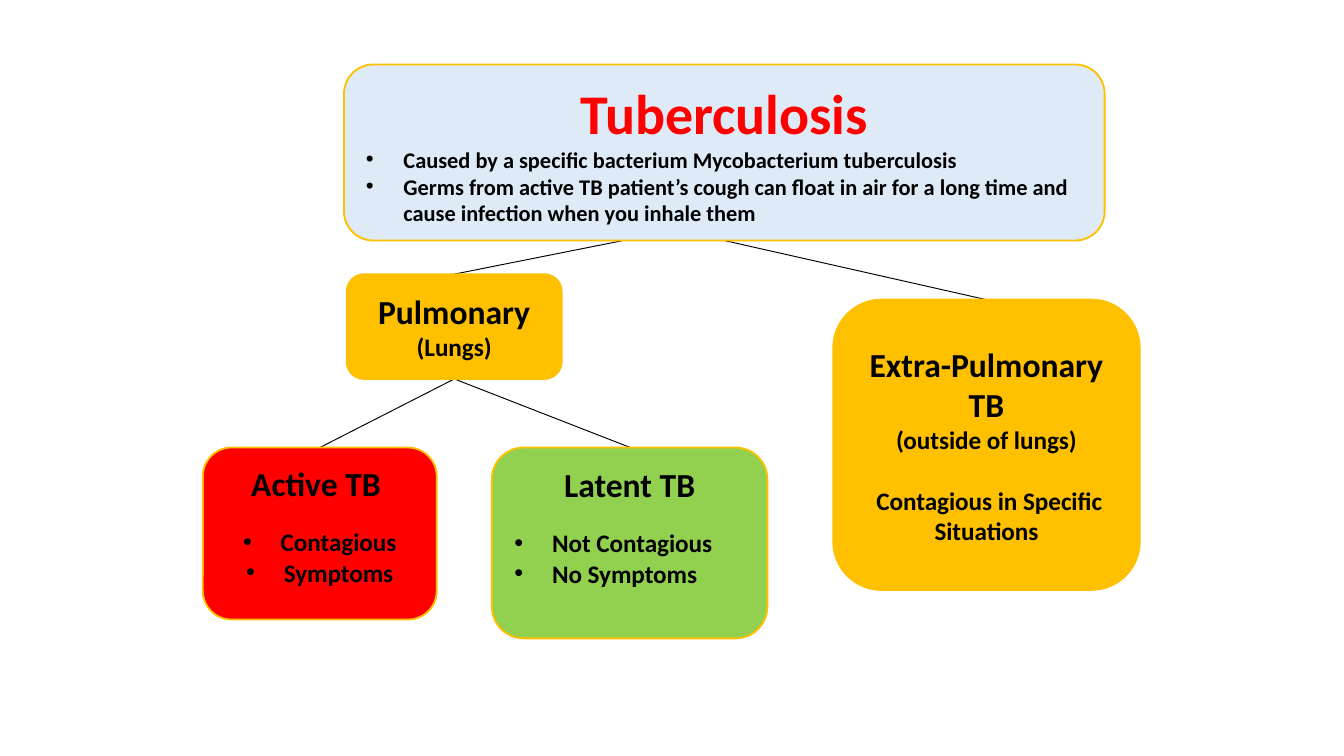
from pptx import Presentation
from pptx import util as u
from pptx.dml.color import RGBColor
from pptx.enum import shapes, text
from pptx.oxml.ns import qn
from lxml import etree

COLORS = {"black": "000000", "red": "FF0000", "amber": "FFC000",
          "green": "92D050", "pale": "DEEBF7"}
CENTER, LEFT = text.PP_ALIGN.CENTER, text.PP_ALIGN.LEFT
MIDDLE, TOP = text.MSO_ANCHOR.MIDDLE, text.MSO_ANCHOR.TOP


def color(name):
    return RGBColor.from_string(COLORS[name])


def add_bullet(para):
    props = para._p.get_or_add_pPr()
    props.set("marL", str(u.Inches(0.28)))
    props.set("indent", str(-u.Inches(0.28)))
    font = etree.SubElement(props, qn("a:buFont"))
    font.set("typeface", "Arial")
    mark = etree.SubElement(props, qn("a:buChar"))
    mark.set("char", "•")


deck = Presentation()
deck.slide_width = u.Inches(10)
deck.slide_height = u.Inches(10 * 9 / 16)
page = deck.slides.add_slide(deck.slide_layouts[6])

links = [
    (5.24, 1.67, 3.38, 2.04),
    (5.39, 1.79, 7.34, 2.23),
    (3.38, 2.82, 2.38, 3.33),
    (3.38, 2.82, 4.69, 3.33),
]
for ends in links:
    link = page.shapes.add_connector(
        shapes.MSO_CONNECTOR.STRAIGHT, *[u.Inches(value) for value in ends])
    link.line.color.rgb = color("black")
    link.line.width = u.Pt(0.5)
    etree.SubElement(link._element.spPr, qn("a:effectLst"))

boxes = [
    ((2.56, 0.48, 5.66, 1.31), "pale", MIDDLE, [
        ([("Tuberculosis", 30)], "red", CENTER, False, 0),
        ([("Caused by a specific bacterium Mycobacterium tuberculosis", 12)],
         "black", LEFT, True, 0),
        ([("Germs from active TB patient’s cough can float in air for a long "
           "time and cause infection when you inhale them", 12)],
         "black", LEFT, True, 0),
    ]),
    ((6.2, 2.23, 2.28, 2.16), "amber", MIDDLE, [
        ([("Extra-Pulmonary TB", 18)], "black", CENTER, False, 0),
        ([("(outside of lungs)", 13.5)], "black", CENTER, False, 0),
        ([(" Contagious in Specific Situations", 13.5)],
         "black", CENTER, False, 16.5),
    ]),
    ((2.58, 2.04, 1.6, 0.78), "amber", MIDDLE, [
        ([("Pulmonary ", 18), ("(Lungs)", 13.5)], "black", CENTER, False, 0),
    ]),
    ((1.51, 3.33, 1.74, 1.28), "red", TOP, [
        ([("Active TB ", 18)], "black", CENTER, False, 0),
        ([("Contagious", 13.5)], "black", CENTER, True, 12.8),
        ([("Symptoms", 13.5)], "black", CENTER, True, 0),
    ]),
    ((3.66, 3.33, 2.05, 1.42), "green", TOP, [
        ([("Latent TB", 18)], "black", CENTER, False, 0),
        ([("Not Contagious", 13.5)], "black", LEFT, True, 12.8),
        ([("No Symptoms", 13.5)], "black", LEFT, True, 0),
    ]),
]
for place, fill, anchor, paragraphs in boxes:
    box = page.shapes.add_shape(
        shapes.MSO_SHAPE.ROUNDED_RECTANGLE, *[u.Inches(value) for value in place])
    box.shadow.inherit = False
    box.fill.solid()
    box.fill.fore_color.rgb = color(fill)
    box.line.color.rgb = color("amber")
    box.line.width = u.Pt(1)
    frame = box.text_frame
    frame.word_wrap = True
    frame.vertical_anchor = anchor
    frame.margin_left = frame.margin_right = u.Inches(0.1)
    frame.margin_top = frame.margin_bottom = u.Inches(0.05)
    for index, (runs, ink, align, bullet, gap) in enumerate(paragraphs):
        para = frame.paragraphs[0] if index == 0 else frame.add_paragraph()
        if bullet:
            add_bullet(para)
        para.alignment = align
        if gap:
            para.space_before = u.Pt(gap)
        for wording, size in runs:
            span = para.add_run()
            span.text = wording
            span.font.name = "Calibri"
            span.font.size = u.Pt(size)
            span.font.bold = True
            span.font.color.rgb = color(ink)

deck.save("out.pptx")
